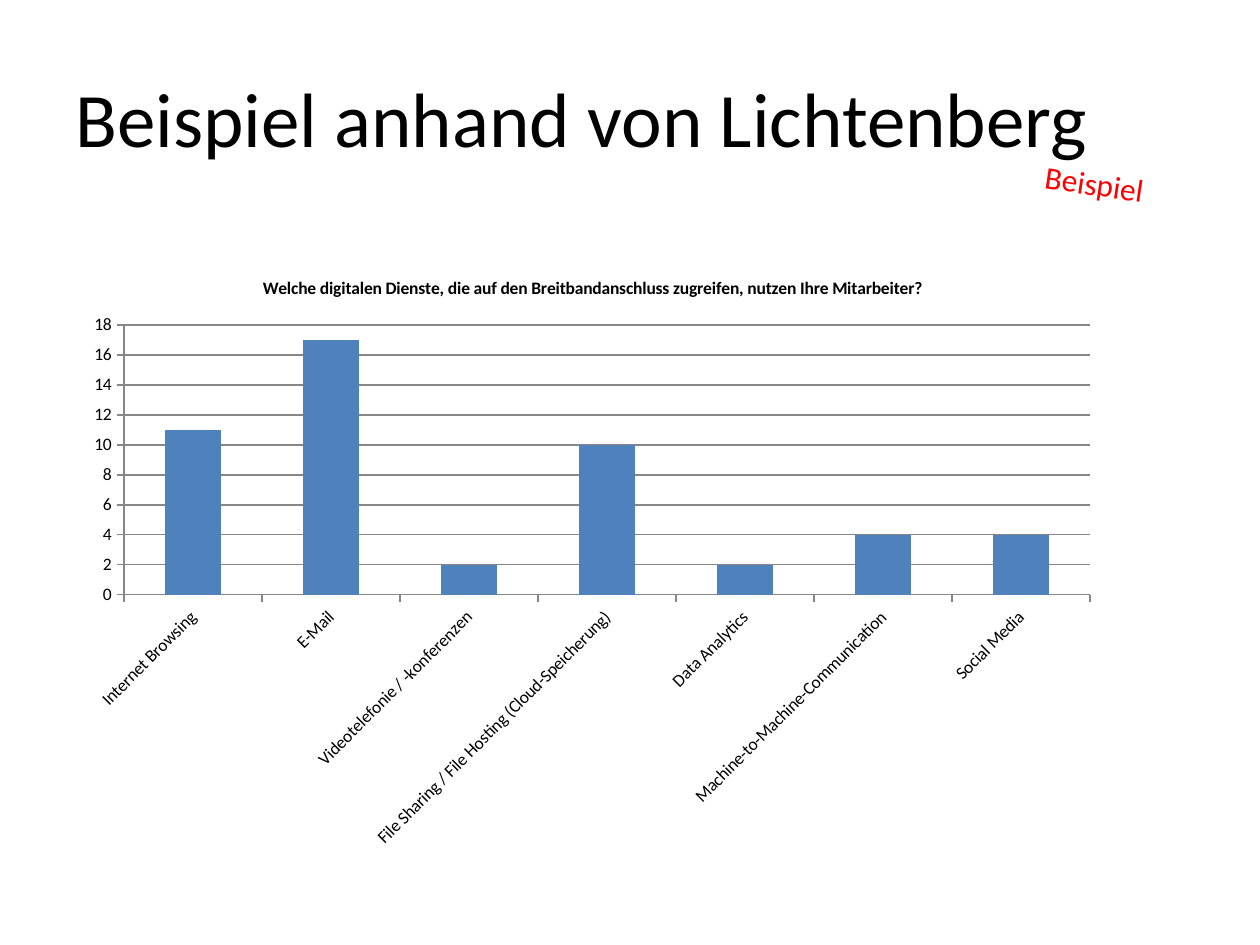
from lxml import etree
from pptx import Presentation
from pptx.chart.data import CategoryChartData
from pptx.dml.color import RGBColor
from pptx.enum.chart import XL_CHART_TYPE, XL_TICK_MARK
from pptx.enum.text import MSO_ANCHOR, PP_ALIGN
from pptx.oxml.ns import qn
from pptx.util import Emu, Pt

COLUMNS = XL_CHART_TYPE.COLUMN_CLUSTERED
OUTSIDE = XL_TICK_MARK.OUTSIDE
MIDDLE, TOP = MSO_ANCHOR.MIDDLE, MSO_ANCHOR.TOP
LEFT, CENTER = PP_ALIGN.LEFT, PP_ALIGN.CENTER

FONT = "Calibri"
BLACK = RGBColor(0x00, 0x00, 0x00)
RED = RGBColor(0xFF, 0x00, 0x00)
BLUE = RGBColor(0x4F, 0x81, 0xBD)
GRAY = RGBColor(0x87, 0x87, 0x87)
EMU_PER_PX = 914400 / 126


def px(*lengths):
    return [Emu(round(length * EMU_PER_PX)) for length in lengths]


def style_font(font, size, color):
    font.name = FONT
    font.size = Pt(size)
    font.color.rgb = color


presentation = Presentation()
presentation.slide_width, presentation.slide_height = px(1260, 945)
slide = presentation.slides.add_slide(presentation.slide_layouts[6])

# Heading and tilted label
for text, box, size, color, anchor, alignment, rotation in (
    ("Beispiel anhand von Lichtenberg", (63, 38, 1134, 157), 44, BLACK, MIDDLE, LEFT, 0),
    ("Beispiel", (1010, 158, 169, 50), 18, RED, TOP, CENTER, 8.6),
):
    shape = slide.shapes.add_textbox(*px(*box))
    shape.rotation = rotation
    text_frame = shape.text_frame
    text_frame.word_wrap = True
    text_frame.vertical_anchor = anchor
    text_frame.text = text
    paragraph = text_frame.paragraphs[0]
    paragraph.alignment = alignment
    style_font(paragraph.runs[0].font, size, color)

# Column chart of digital services
chart_data = CategoryChartData()
chart_data.categories = [
    "Internet Browsing",
    "E-Mail",
    "Videotelefonie / -konferenzen",
    "File Sharing / File Hosting (Cloud-Speicherung)",
    "Data Analytics",
    "Machine-to-Machine-Communication",
    "Social Media",
]
chart_data.add_series("Series 1", (11, 17, 2, 10, 2, 4, 4))
chart = slide.shapes.add_chart(COLUMNS, *px(74, 255, 1037, 606), chart_data).chart
style_font(chart.font, 10, BLACK)
chart.has_legend = False
chart.has_title = True
title_frame = chart.chart_title.text_frame
title_frame.text = (
    "Welche digitalen Dienste, die auf den Breitbandanschluss zugreifen, "
    "nutzen Ihre Mitarbeiter?"
)
title_font = title_frame.paragraphs[0].runs[0].font
style_font(title_font, 10, BLACK)
title_font.bold = True

plot = chart.plots[0]
plot.vary_by_categories = False
plot.gap_width = 150
fill = plot.series[0].format.fill
fill.solid()
fill.fore_color.rgb = BLUE

value_axis, category_axis = chart.value_axis, chart.category_axis
for axis in (value_axis, category_axis):
    axis.major_tick_mark = OUTSIDE
    axis.format.line.color.rgb = GRAY
    axis.format.line.width = Pt(0.75)
    style_font(axis.tick_labels.font, 10, BLACK)
value_axis.minimum_scale = 0
value_axis.maximum_scale = 18
value_axis.major_unit = 2
value_axis.has_major_gridlines = True
gridline = value_axis.major_gridlines.format.line
gridline.color.rgb = GRAY
gridline.width = Pt(0.75)

# Category labels rise at 45 degrees
label_body = category_axis._element.find(qn("c:txPr")).find(qn("a:bodyPr"))
label_body.set("rot", str(-45 * 60000))
label_body.set("vert", "horz")

# Fixed inner plot area, as fractions of the chart
plot_area = chart._chartSpace.chart.plotArea
for layout in plot_area.findall(qn("c:layout")):
    plot_area.remove(layout)
layout = etree.Element(qn("c:layout"))
manual_layout = etree.SubElement(layout, qn("c:manualLayout"))
for tag, value in (
    ("layoutTarget", "inner"), ("xMode", "edge"), ("yMode", "edge"),
    ("x", 50 / 1037), ("y", 70 / 606), ("w", 966 / 1037), ("h", 270 / 606),
):
    etree.SubElement(manual_layout, qn(f"c:{tag}")).set("val", str(value))
plot_area.insert(0, layout)

presentation.save("out.pptx")
